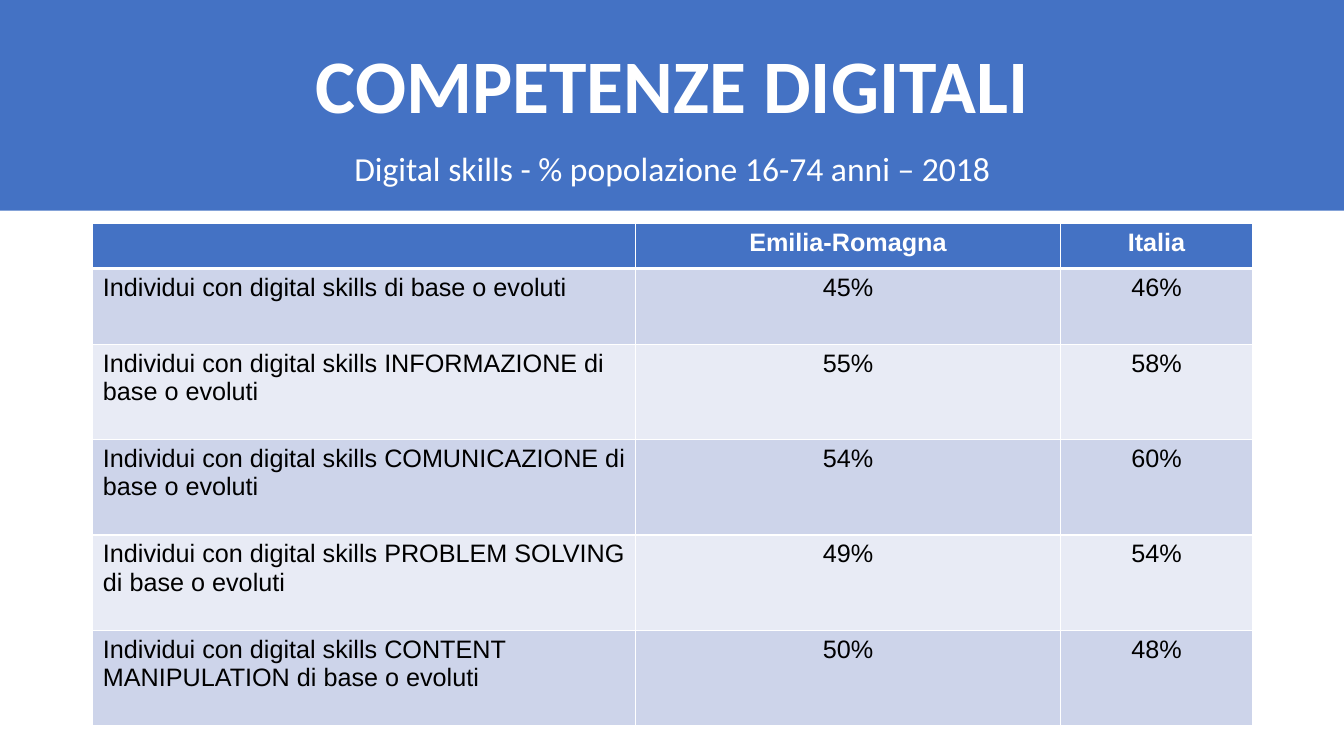
from dataclasses import dataclass

from lxml.etree import SubElement
from pptx import Presentation
from pptx.dml.color import RGBColor as Rgb
from pptx.enum.shapes import MSO_SHAPE as Shape
from pptx.enum.text import MSO_ANCHOR as Anchor, MSO_AUTO_SIZE as Fit, PP_ALIGN as Align
from pptx.oxml.ns import qn
from pptx.util import Cm, Pt


@dataclass(frozen=True)
class Theme:
    blue: str = "4472C4"
    white: str = "FFFFFF"
    black: str = "000000"
    bands: tuple = ("CDD4EA", "E8EBF5")
    head: str = "Calibri"
    body: str = "Arial"
    title: int = 54
    sub: int = 24
    cell: int = 18
    thin: int = 1
    thick: int = 3


THEME = Theme()
LEFT, WIDTH = 2.34, 29.21
COLS = (13.67, 10.72, 4.83)
ROWS = (1.13, 1.91, 2.4, 2.4, 2.4, 2.4)
DATA = (
    ("", "Emilia-Romagna", "Italia"),
    ("Individui con digital skills di base o evoluti", "45%", "46%"),
    ("Individui con digital skills INFORMAZIONE di base o evoluti", "55%", "58%"),
    ("Individui con digital skills COMUNICAZIONE di base o evoluti", "54%", "60%"),
    ("Individui con digital skills PROBLEM SOLVING di base o evoluti", "49%", "54%"),
    ("Individui con digital skills CONTENT MANIPULATION di base o evoluti", "50%", "48%"),
)


def style(frame, font, size, color, bold=False, align=Align.CENTER):
    for para in frame.paragraphs:
        para.alignment = align
        for run in para.runs:
            run.font.name = font
            run.font.size = Pt(size)
            run.font.bold = bold
            run.font.color.rgb = Rgb.from_string(color)


def add_band(slide, width, height):
    band = slide.shapes.add_shape(Shape.RECTANGLE, 0, 0, width, height)
    band.shadow.inherit = False
    band.fill.solid()
    band.fill.fore_color.rgb = Rgb.from_string(THEME.blue)
    band.line.fill.background()
    band.element.getparent().insert(2, band.element)


def fill_holder(holder, text, top, height, size, anchor, bold=False):
    holder.left, holder.top = Cm(LEFT), Cm(top)
    holder.width, holder.height = Cm(WIDTH), Cm(height)
    frame = holder.text_frame
    frame.text = text
    frame.word_wrap = True
    frame.auto_size = Fit.NONE
    frame.vertical_anchor = anchor
    para = frame.paragraphs[0]
    para.line_spacing = 0.9
    para.space_before = Pt(0)
    style(frame, THEME.head, size, THEME.white, bold)


def add_edge(cell, side, width):
    props = cell._tc.get_or_add_tcPr()
    edge = SubElement(props, qn("a:" + side), w=str(Pt(width)))
    paint = SubElement(edge, qn("a:solidFill"))
    SubElement(paint, qn("a:srgbClr"), val=THEME.white)


def fill_cell(cell, text, row, col):
    head = row == 0
    widths = {
        "lnL": THEME.thin,
        "lnR": THEME.thin,
        "lnT": THEME.thick if row == 1 else THEME.thin,
        "lnB": THEME.thick if head else THEME.thin,
    }
    for side, width in widths.items():
        add_edge(cell, side, width)
    cell.fill.solid()
    color = THEME.blue if head else THEME.bands[(row - 1) % 2]
    cell.fill.fore_color.rgb = Rgb.from_string(color)
    cell.text_frame.text = text
    ink = THEME.white if head else THEME.black
    align = Align.CENTER if head or col else Align.LEFT
    style(cell.text_frame, THEME.body, THEME.cell, ink, head, align)


def add_grid(slide, top):
    frame = slide.shapes.add_table(
        len(ROWS), len(COLS), Cm(LEFT), Cm(top), Cm(WIDTH), Cm(sum(ROWS))
    )
    table = frame.table
    for col, width in zip(table.columns, COLS):
        col.width = Cm(width)
    for row, height in zip(table.rows, ROWS):
        row.height = Cm(height)
    for row, line in enumerate(DATA):
        for col, text in enumerate(line):
            fill_cell(table.cell(row, col), text, row, col)


def main():
    deck = Presentation()
    deck.slide_width, deck.slide_height = Cm(33.87), Cm(19.05)
    slide = deck.slides.add_slide(deck.slide_layouts.get_by_name("Section Header"))
    add_band(slide, deck.slide_width, Cm(5.31))
    title, body = slide.placeholders
    fill_holder(title, "COMPETENZE DIGITALI", 0.81, 2.59, THEME.title, Anchor.BOTTOM, True)
    fill_holder(
        body, "Digital skills - % popolazione 16-74 anni – 2018", 3.71, 1.17, THEME.sub, Anchor.TOP
    )
    add_grid(slide, 5.64)
    deck.save("out.pptx")


if __name__ == "__main__":
    main()
